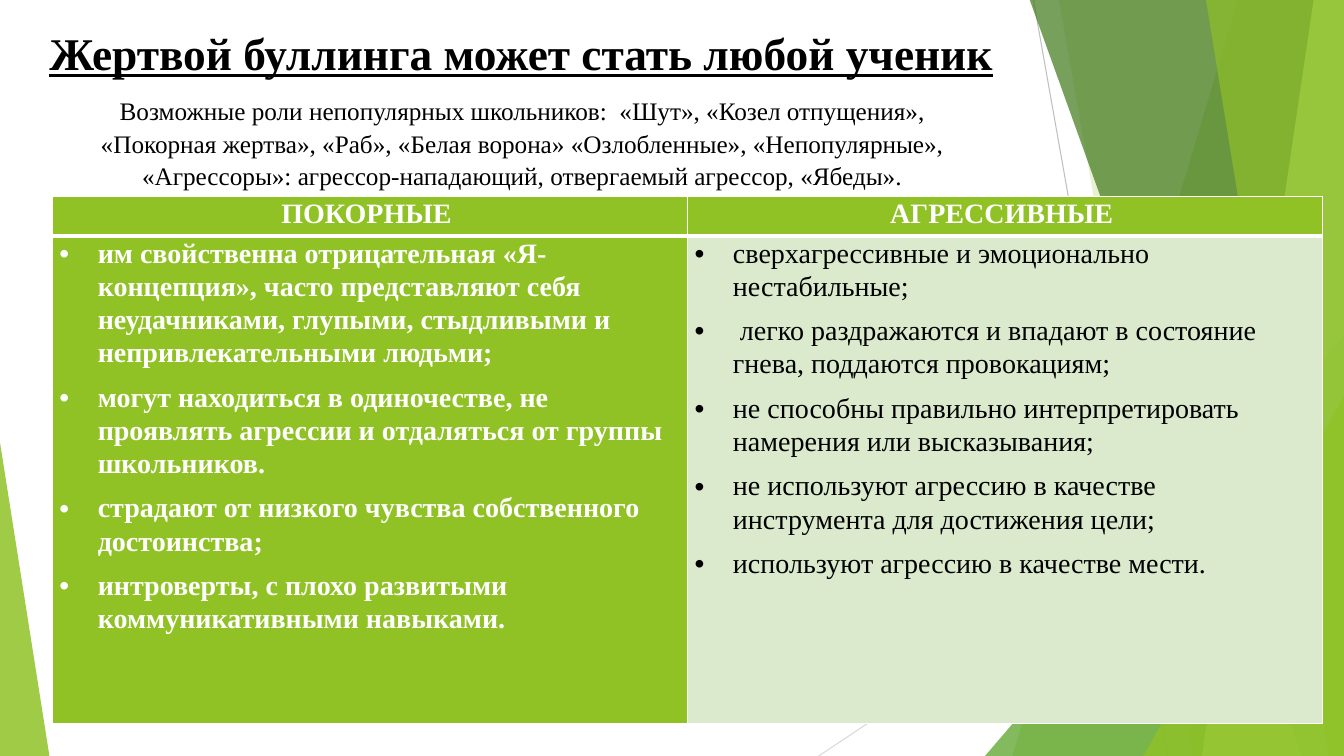
"""Build the slide about the pupils who become victims of bullying."""
import pptx
import pptx.chart.data
import pptx.dml.color
import pptx.enum.shapes
import pptx.enum.text
import pptx.oxml
import pptx.oxml.ns
import pptx.util

TITLE = "Жертвой буллинга может стать любой ученик"
ROLES = (
    "Возможные роли непопулярных школьников:  «Шут», «Козел отпущения», "
    "«Покорная жертва», «Раб», «Белая ворона» «Озлобленные», «Непопулярные», "
    "«Агрессоры»: агрессор-нападающий, отвергаемый агрессор, «Ябеды»."
)
TYPES = {
    "ПОКОРНЫЕ ": [
        "им свойственна отрицательная «Я-концепция», часто представляют себя "
        "неудачниками, глупыми, стыдливыми и непривлекательными людьми;",
        "могут находиться в одиночестве, не проявлять агрессии и отдаляться "
        "от группы школьников.",
        "страдают от низкого чувства собственного достоинства;",
        "интроверты, с плохо развитыми коммуникативными навыками.",
    ],
    "АГРЕССИВНЫЕ ": [
        "сверхагрессивные и эмоционально нестабильные;",
        " легко раздражаются и впадают в состояние гнева, поддаются провокациям;",
        "не способны правильно интерпретировать намерения или высказывания;",
        "не используют агрессию в качестве инструмента для достижения цели;",
        "используют агрессию в качестве мести.",
    ],
}
THEME = {
    "font": "Times New Roman", "title": 32.4, "roles": 18, "cell": 20,
    "black": "000000", "white": "FFFFFF", "green": "90C226", "pale": "DBE9CD",
    "leaf": "54A021", "dark": "3F7819", "lime": "C0E474",
    "gray": "BFBFBF", "mist": "D9D9D9",
}
WIDE, HIGH = 13.33, 7.5
RAYS = [((10.25, 0), (11.58, HIGH), "gray"), ((WIDE, 4.03), (8.12, HIGH), "mist")]
# Each facet: kind, geometry, colour key, opacity in percent
FACETS = [
    ("wedge", (12.28, 10.04), "green", 30),
    ("wedge", (10.5, 11.83), "green", 20),
    ("peak", (9.77, 3.33, 3.56, 4.17, 1), "leaf", 72),
    ("wedge", (10.21, 12.91), "dark", 70),
    ("wedge", (13.03, 11.92), "lime", 70),
    ("wedge", (11.96, 13.18), "green", 65),
    ("peak", (11.34, 3.93, 1.99, 3.57, 1), "green", 80),
    ("peak", (0, 4.39, 0.49, 3.11, 0), "green", 85),
]
Inches, Pt = pptx.util.Inches, pptx.util.Pt
ALIGN = pptx.enum.text.PP_ALIGN
SHAPE = pptx.enum.shapes.MSO_SHAPE


def tint(key):
    return pptx.dml.color.RGBColor.from_string(THEME[key])


def put(item, form):
    for name, value in form.items():
        setattr(item, name, value)


def node(base, tag, **attrs):
    child = pptx.oxml.parse_xml(f'<a:{tag} {pptx.oxml.ns.nsdecls("a")}/>')
    for name, value in attrs.items():
        child.set(name, str(value))
    base.append(child)
    return child


def write(para, text, size, color, bold=False, line=False, form=None):
    run = para.add_run()
    run.text = text
    put(run.font, {"name": THEME["font"], "size": Pt(THEME[size]),
                   "bold": bold, "underline": line})
    run.font.color.rgb = tint(color)
    put(para, form or {"alignment": ALIGN.CENTER, "line_spacing": 1.07})


def draw_ray(shapes, start, end, color):
    ends = [Inches(n) for n in start + end]
    ray = shapes.add_connector(pptx.enum.shapes.MSO_CONNECTOR.STRAIGHT, *ends)
    ray.line.color.rgb = tint(color)
    ray.line.width = Pt(0.75)
    node(ray.element.spPr, "effectLst")


def draw_facet(shapes, kind, geom, color, alpha):
    if kind == "peak":
        *box, tip = geom
        facet = shapes.add_shape(SHAPE.ISOSCELES_TRIANGLE, *map(Inches, box))
        facet.adjustments[0] = tip
    else:
        top, foot = geom
        spots = [(top, -0.01), (WIDE, -0.01), (WIDE, HIGH), (foot, HIGH)]
        spots = [(Inches(x), Inches(y)) for x, y in spots]
        pen = shapes.build_freeform(*spots[0])
        pen.add_line_segments(spots[1:], close=True)
        facet = pen.convert_to_shape()
    facet.shadow.inherit = False
    facet.line.fill.background()
    facet.fill.solid()
    facet.fill.fore_color.rgb = tint(color)
    shade = facet.element.spPr.find(".//" + pptx.oxml.ns.qn("a:srgbClr"))
    node(shade, "alpha", val=alpha * 1000)


def dress(cell, color, foot):
    put(cell, {"margin_left": Inches(0.07), "margin_right": Inches(0.07),
               "margin_top": 0, "margin_bottom": 0})
    props = cell._tc.get_or_add_tcPr()
    for side, width in zip("LRTB", (1, 1, 1, foot)):
        edge = node(props, "ln" + side, w=Pt(width))
        node(node(edge, "solidFill"), "srgbClr", val=THEME["white"])
    cell.fill.solid()
    cell.fill.fore_color.rgb = tint(color)


def fill_list(frame, items, color, bold):
    form = {"line_spacing": 1.07, "space_after": Pt(8), "alignment": ALIGN.LEFT}
    for row, text in enumerate(items):
        para = frame.add_paragraph() if row else frame.paragraphs[0]
        write(para, text, "cell", color, bold, form=form)
        props = para._p.get_or_add_pPr()
        props.set("marL", str(Inches(0.38)))
        props.set("indent", str(-Inches(0.38)))
        node(props, "buFont", typeface="Arial")
        node(props, "buChar", char="•")


def draw_table(shapes):
    box = map(Inches, (0.52, 1.95, 12.6, 5.23))
    table = shapes.add_table(2, len(TYPES), *box).table
    table.horz_banding = False
    for row, height in zip(table.rows, (0.39, 4.84)):
        row.height = Inches(height)
    looks = [("green", "white", True), ("pale", "black", False)]
    for col, ((head, items), look) in enumerate(zip(TYPES.items(), looks)):
        back, color, bold = look
        top, body = table.cell(0, col), table.cell(1, col)
        dress(top, "green", 3)
        write(top.text_frame.paragraphs[0], head, "cell", "white", True)
        dress(body, back, 1)
        fill_list(body.text_frame, items, color, bold)


def place(shape, box):
    put(shape, dict(zip(("left", "top", "width", "height"), map(Inches, box))))
    put(shape.text_frame, {
        "word_wrap": True, "auto_size": pptx.enum.text.MSO_AUTO_SIZE.NONE,
        "vertical_anchor": pptx.enum.text.MSO_ANCHOR.TOP})
    return shape.text_frame.paragraphs[0]


def main():
    deck = pptx.Presentation()
    put(deck, {"slide_width": Inches(WIDE), "slide_height": Inches(HIGH)})
    slide = deck.slides.add_slide(deck.slide_layouts[5])
    shapes = slide.shapes
    for ray in RAYS:
        draw_ray(shapes, *ray)
    for facet in FACETS:
        draw_facet(shapes, *facet)
    title = shapes.title
    title.element.getparent().append(title.element)
    write(place(title, (0.16, 0.2, 10.02, 0.91)), TITLE, "title", "black", True,
          True, {"alignment": ALIGN.CENTER})
    draw_table(shapes)
    box = (0.52, 0.88, 9.32, 1.07)
    roles = shapes.add_textbox(*map(Inches, box))
    write(place(roles, box), ROLES, "roles", "black")
    deck.save("out.pptx")


if __name__ == "__main__":
    main()
